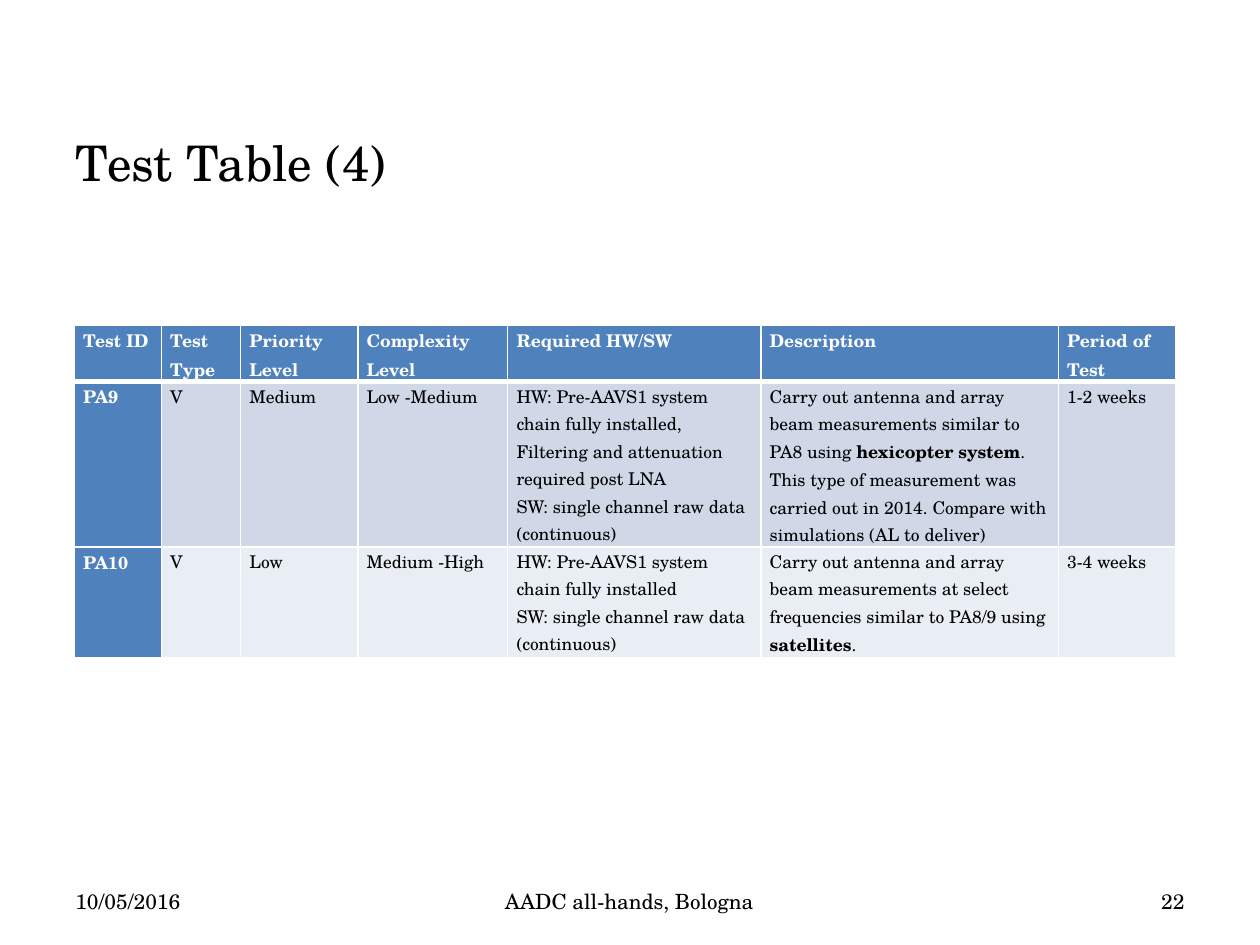
from lxml.etree import SubElement
from pptx import Presentation
from pptx.dml.color import RGBColor
from pptx.enum.text import MSO_ANCHOR as ANCHOR, PP_ALIGN as ALIGN
from pptx.oxml.ns import qn
from pptx.util import Inches, Pt

WIDTH, HEIGHT = 10, 7.5
GRID_COLS, GRID_ROWS = 20, 15
BLACK, WHITE, BLUE = "000000", "FFFFFF", "4F81BD"
BANDS = ["D0D8E8", "E9EDF4"]

COL_WIDTHS = [0.69, 0.63, 0.93, 1.19, 2.01, 2.36, 0.93]
ROW_HEIGHTS = [0.45, 1.31, 0.88]
HEADER = ["Test ID", "Test Type", "Priority Level", "Complexity Level",
          "Required HW/SW", "Description", "Period of Test"]
SOFTWARE = "SW: single channel raw data (continuous)"
TESTS = [
    ["PA9", "V", "Medium", "Low -Medium",
     ["HW: Pre-AAVS1 system chain fully installed, Filtering and attenuation "
      "required post LNA", SOFTWARE],
     [["Carry out antenna and array beam measurements similar to PA8 using ",
       "hexicopter system",
       ". This type of measurement was carried out in 2014. Compare with "
       "simulations (AL to deliver)"]],
     "1-2 weeks"],
    ["PA10", "V", "Low", "Medium -High",
     ["HW: Pre-AAVS1 system chain fully installed", SOFTWARE],
     [["Carry out antenna and array beam measurements at select frequencies "
       "similar to PA8/9 using ", "satellites", "."]],
     "3-4 weeks"],
]


def rgb(value):
    return RGBColor.from_string(value)


def apply(target, values):
    for name, value in values.items():
        setattr(target, name, value)


class Deck:
    font = "TeX Gyre Schola"
    cell = {"margin_left": Inches(0.07), "margin_right": Inches(0.07),
            "margin_top": 0, "margin_bottom": 0,
            "vertical_anchor": ANCHOR.TOP}

    def __init__(self):
        self.prs = Presentation()
        apply(self.prs, {"slide_width": Inches(WIDTH),
                         "slide_height": Inches(HEIGHT)})
        self.s = self.prs.slides.add_slide(self.prs.slide_layouts[5])

    def box(self, col, row, cols, rows):
        dx = self.prs.slide_width / GRID_COLS
        dy = self.prs.slide_height / GRID_ROWS
        return [round(v) for v in (col * dx, row * dy, cols * dx, rows * dy)]

    def run(self, p, text, size, color=BLACK, bold=False):
        r = p.add_run()
        r.text = text
        apply(r.font, {"name": self.font, "size": Pt(size), "bold": bold})
        r.font.color.rgb = rgb(color)

    def title(self, text, *place):
        sp = self.s.shapes.title
        apply(sp, dict(zip(("left", "top", "width", "height"),
                           self.box(*place))))
        apply(sp.text_frame, {"word_wrap": True,
                              "vertical_anchor": ANCHOR.TOP})
        p = sp.text_frame.paragraphs[0]
        p.alignment = ALIGN.LEFT
        self.run(p, text, 28)

    def text(self, text, align, *place):
        tf = self.s.shapes.add_textbox(*self.box(*place)).text_frame
        apply(tf, {"word_wrap": True, "vertical_anchor": ANCHOR.MIDDLE})
        p = tf.paragraphs[0]
        p.alignment = align
        self.run(p, text, 12)

    def borders(self, cell, bottom):
        tc_pr = cell._tc.get_or_add_tcPr()
        sides = {"a:lnL": 1, "a:lnR": 1, "a:lnT": 1, "a:lnB": bottom}
        for i, (tag, width) in enumerate(sides.items()):
            ln = SubElement(tc_pr, qn(tag), w=str(Pt(width)))
            fill = SubElement(ln, qn("a:solidFill"))
            SubElement(fill, qn("a:srgbClr"), val=WHITE)
            tc_pr.insert(i, ln)

    def fill_cell(self, cell, content, fill, heading, bottom):
        apply(cell, self.cell)
        cell.fill.solid()
        cell.fill.fore_color.rgb = rgb(fill)
        self.borders(cell, bottom)
        tf = cell.text_frame
        paragraphs = [content] if isinstance(content, str) else content
        for i, runs in enumerate(paragraphs):
            p = tf.add_paragraph() if i else tf.paragraphs[0]
            p.line_spacing = 1.07
            parts = [runs] if isinstance(runs, str) else runs
            for j, part in enumerate(parts):
                self.run(p, part, 10, WHITE if heading else BLACK,
                         heading or j % 2 == 1)

    def table(self, rows, *place):
        frame = self.s.shapes.add_table(len(rows), len(rows[0]),
                                        *self.box(*place))
        table = frame.table
        for col, width in zip(table.columns, COL_WIDTHS):
            col.width = Inches(width)
        for row, height in zip(table.rows, ROW_HEIGHTS):
            row.height = Inches(height)
        for i, row in enumerate(rows):
            for j, content in enumerate(row):
                heading = i == 0 or j == 0
                fill = BLUE if heading else BANDS[(i - 1) % 2]
                self.fill_cell(table.cell(i, j), content, fill, heading,
                               1 if i else 3)


def main():
    deck = Deck()
    deck.title("Test Table (4)", 1, 2, 18, 2)
    deck.text("10/05/2016", ALIGN.LEFT, 1, 13.9, 4.66, 0.8)
    deck.text("AADC all-hands, Bologna", ALIGN.CENTER, 5.9, 13.9, 8.18, 0.8)
    deck.text("22", ALIGN.RIGHT, 14.34, 13.9, 4.66, 0.8)
    deck.table([HEADER] + TESTS, 1.18, 5.16, 2 * sum(COL_WIDTHS),
               2 * sum(ROW_HEIGHTS))
    deck.prs.save("out.pptx")


if __name__ == "__main__":
    main()
